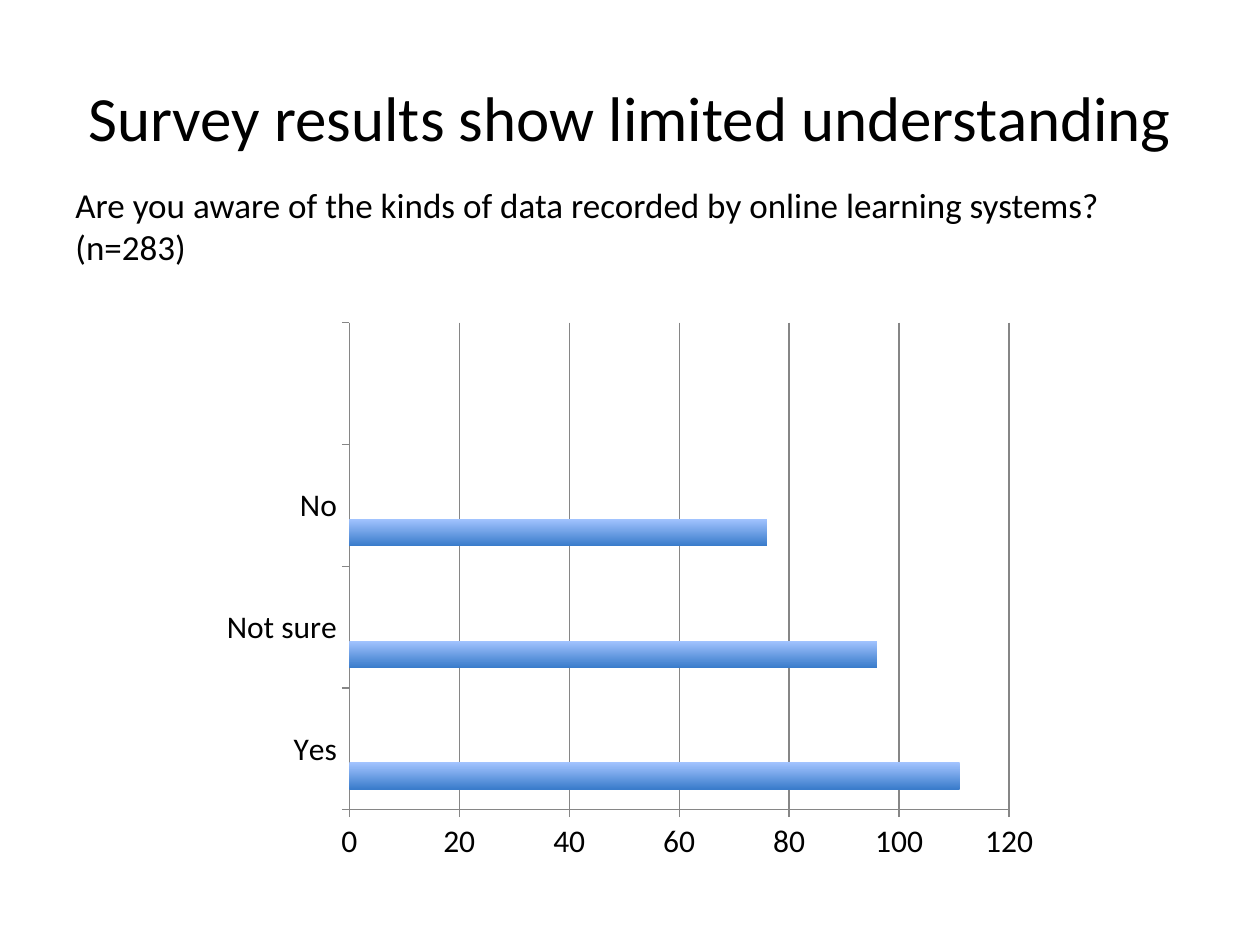
from dataclasses import dataclass

from pptx import Presentation
from pptx.chart.data import CategoryChartData
from pptx.dml.color import RGBColor
from pptx.enum.chart import XL_CHART_TYPE, XL_TICK_MARK
from pptx.enum.text import MSO_ANCHOR, PP_ALIGN
from pptx.util import Pt

BAR_CLUSTERED = XL_CHART_TYPE.BAR_CLUSTERED
TICK_OUTSIDE = XL_TICK_MARK.OUTSIDE
LEFT, CENTER = PP_ALIGN.LEFT, PP_ALIGN.CENTER
TOP, MIDDLE = MSO_ANCHOR.TOP, MSO_ANCHOR.MIDDLE


@dataclass(frozen=True)
class Theme:
    font: str = "Calibri"
    title_size: int = 36
    question_size: int = 20
    chart_size: int = 18
    text: RGBColor = RGBColor(0, 0, 0)
    background: RGBColor = RGBColor(255, 255, 255)
    axis: RGBColor = RGBColor(0x86, 0x86, 0x86)
    bar_top: RGBColor = RGBColor(0xA3, 0xC4, 0xFF)
    bar_bottom: RGBColor = RGBColor(0x3A, 0x7C, 0xCB)
    spare_series: tuple = (RGBColor(0xC0, 0x50, 0x4D), RGBColor(0x9B, 0xBB, 0x59))


def write_text(text_frame, text, *, size, font, color, align=LEFT, anchor=TOP):
    text_frame.word_wrap = True
    text_frame.vertical_anchor = anchor
    paragraph = text_frame.paragraphs[0]
    paragraph.alignment = align
    run = paragraph.add_run()
    run.text = text
    run.font.size = Pt(size)
    run.font.name = font
    run.font.color.rgb = color


class SlideBuilder:
    def __init__(self, slide, theme):
        self.slide = slide
        self.theme = theme
        fill = slide.background.fill
        fill.solid()
        fill.fore_color.rgb = theme.background

    def text(self, text, box, size, **layout):
        shape = self.slide.shapes.add_textbox(*map(Pt, box))
        write_text(shape.text_frame, text, size=size, font=self.theme.font,
                   color=self.theme.text, **layout)

    def bar_chart(self, categories, series, box, maximum, step):
        data = CategoryChartData()
        data.categories = categories
        for name, values in series.items():
            data.add_series(name, values)
        frame = self.slide.shapes.add_chart(BAR_CLUSTERED, *map(Pt, box), data)
        chart = frame.chart
        chart.has_title = False
        chart.has_legend = False
        chart.font.size = Pt(self.theme.chart_size)
        chart.font.name = self.theme.font
        chart.font.color.rgb = self.theme.text

        # Axes and gridlines
        chart.value_axis.minimum_scale = 0
        chart.value_axis.maximum_scale = maximum
        chart.value_axis.major_unit = step
        chart.value_axis.has_major_gridlines = True
        self.line(chart.value_axis.major_gridlines)
        for axis in (chart.category_axis, chart.value_axis):
            axis.major_tick_mark = TICK_OUTSIDE
            self.line(axis)

        # Bars
        plot = chart.plots[0]
        plot.gap_width = 150
        plot.vary_by_categories = False
        answers, *spares = plot.series
        fill = answers.format.fill
        fill.gradient()
        fill.gradient_angle = 270
        colors = (self.theme.bar_top, self.theme.bar_bottom)
        for stop, color in zip(fill.gradient_stops, colors):
            stop.color.rgb = color
        for spare, color in zip(spares, self.theme.spare_series):
            spare.format.fill.solid()
            spare.format.fill.fore_color.rgb = color

    def line(self, element):
        element.format.line.color.rgb = self.theme.axis
        element.format.line.width = Pt(0.75)


def main():
    presentation = Presentation()
    presentation.slide_width = Pt(720)
    presentation.slide_height = Pt(540)
    theme = Theme()
    slide = presentation.slides.add_slide(presentation.slide_layouts[6])
    builder = SlideBuilder(slide, theme)

    # Title and survey question
    builder.text("Survey results show limited understanding", (36, 21.6, 648, 90),
                 theme.title_size, align=CENTER, anchor=MIDDLE)
    builder.text("Are you aware of the kinds of data recorded by online learning "
                 "systems? (n=283)", (36, 101.5, 619, 55.5), theme.question_size)

    # Answers, with an empty fourth category
    empty = (None,) * 4
    builder.bar_chart(
        ("Yes", "Not sure", "No", ""),
        {"Series 1": (111, 96, 76, None), "Series 2": empty, "Series 3": empty},
        (120, 178, 480, 320), maximum=120, step=20)

    presentation.save("out.pptx")


if __name__ == "__main__":
    main()
